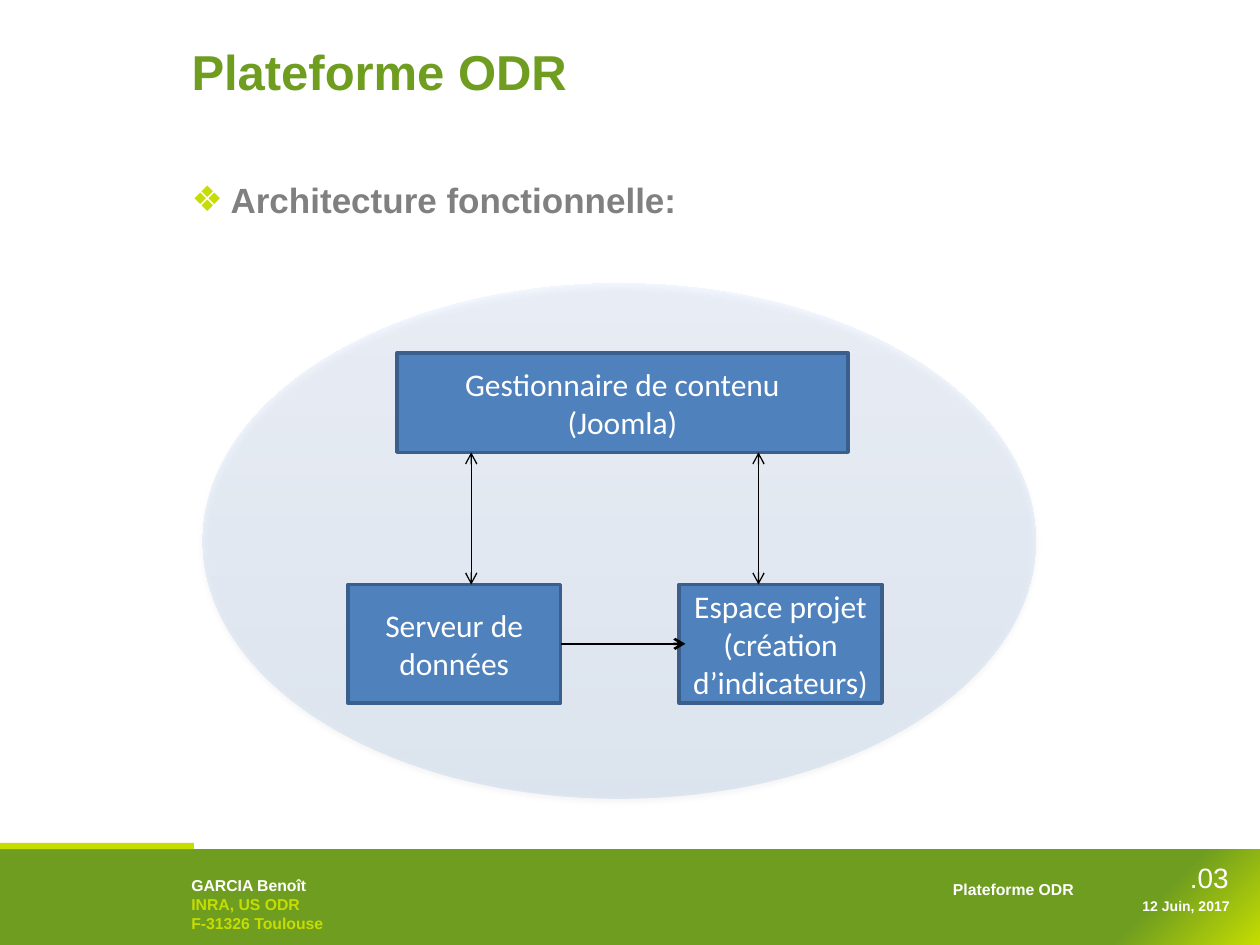
from lxml.etree import SubElement
from pptx import Presentation
from pptx.dml.color import RGBColor
from pptx.enum.shapes import MSO_CONNECTOR, MSO_SHAPE
from pptx.enum.text import MSO_ANCHOR, PP_ALIGN
from pptx.oxml import parse_xml
from pptx.oxml.ns import nsdecls, qn
from pptx.util import Inches, Pt

WHITE = RGBColor(0xFF, 0xFF, 0xFF)
BLACK = RGBColor(0, 0, 0)
GREEN = RGBColor(0x6F, 0x9D, 0x20)
LIME = RGBColor(0xC5, 0xDD, 0x01)
GRAY = RGBColor(0x80, 0x80, 0x80)
BLUE = RGBColor(0x4F, 0x81, 0xBD)
DARK_BLUE = RGBColor(0x3A, 0x5F, 0x8C)
HAZE_BLUE = RGBColor(0x3F, 0x80, 0xCE)
PALE_BLUE = RGBColor(0xA4, 0xC4, 0xFF)

CORNER = '<a:path path="circle"><a:fillToRect l="100000" t="100000"/></a:path>'
UPWARD = '<a:lin ang="16200000" scaled="0"/>'


def place(sp, left, top, width, height):
    sp.left, sp.top = Inches(left), Inches(top)
    sp.width, sp.height = Inches(width), Inches(height)


def add_run(p, text, size, color, bold=True, font="Arial"):
    r = p.add_run()
    r.text = text
    r.font.size, r.font.bold, r.font.name = Pt(size), bold, font
    r.font.color.rgb = color


def add_box(slide, kind, at, fill, line=None):
    sp = slide.shapes.add_shape(kind, *map(Inches, at))
    sp.shadow.inherit = False
    sp.fill.solid()
    sp.fill.fore_color.rgb = fill
    if line is None:
        sp.line.fill.background()
    else:
        sp.line.color.rgb = line
        sp.line.width = Pt(2)
    return sp


def set_gradient(sp, stops, direction, alpha=100):
    """Swap the solid fill for a gradient; stops are (percent, colour)."""
    gs = "".join(
        f'<a:gs pos="{pos * 1000}"><a:srgbClr val="{color}">'
        f'<a:alpha val="{alpha * 1000}"/></a:srgbClr></a:gs>'
        for pos, color in stops)
    grad = parse_xml(f'<a:gradFill {nsdecls("a")} rotWithShape="1">'
                     f'<a:gsLst>{gs}</a:gsLst>{direction}</a:gradFill>')
    spPr = sp._element.spPr
    spPr.replace(spPr.find(qn("a:solidFill")), grad)


def add_shadow(sp):
    effects = sp._element.spPr.find(qn("a:effectLst"))
    effects.append(parse_xml(
        f'<a:outerShdw {nsdecls("a")} blurRad="{Pt(3.1)}" dist="{Pt(1.8)}" '
        'dir="5400000" rotWithShape="0"><a:srgbClr val="000000">'
        '<a:alpha val="35000"/></a:srgbClr></a:outerShdw>'))


def add_node(slide, text, at):
    sp = add_box(slide, MSO_SHAPE.RECTANGLE, at, BLUE, DARK_BLUE)
    tf = sp.text_frame
    tf.word_wrap = True
    tf.vertical_anchor = MSO_ANCHOR.MIDDLE
    p = tf.paragraphs[0]
    p.alignment = PP_ALIGN.CENTER
    add_run(p, text, 18, WHITE, False, "Calibri")


def add_arrow(slide, start, end, width, ends):
    cxn = slide.shapes.add_connector(
        MSO_CONNECTOR.STRAIGHT, *map(Inches, start + end))
    cxn.line.color.rgb = BLACK
    cxn.line.width = Pt(width)
    ln = cxn.line._get_or_add_ln()
    for tag in ends:
        SubElement(ln, qn(f"a:{tag}"), type="arrow")
    SubElement(cxn._element.spPr, qn("a:effectLst"))


def add_text(slide, lines, at, align=PP_ALIGN.LEFT, anchor=MSO_ANCHOR.TOP):
    """Add a text box; each line is (text, size, colour, bold)."""
    tf = slide.shapes.add_textbox(*map(Inches, at)).text_frame
    tf.word_wrap = True
    tf.vertical_anchor = anchor
    for i, line in enumerate(lines):
        p = tf.add_paragraph() if i else tf.paragraphs[0]
        p.alignment = align
        add_run(p, *line)


def fill_title(sp, text):
    place(sp, 1.42, 0.28, 7.4, 0.57)
    sp.text_frame.vertical_anchor = MSO_ANCHOR.MIDDLE
    p = sp.text_frame.paragraphs[0]
    p.alignment = PP_ALIGN.LEFT
    add_run(p, text, 28, GREEN)


def fill_body(sp, text):
    place(sp, 1.42, 1.2, 8.15, 5.22)
    p = sp.text_frame.paragraphs[0]
    pPr = p._p.get_or_add_pPr()
    pPr.set("marL", str(Inches(0.31)))
    pPr.set("indent", str(-Inches(0.31)))
    color = SubElement(pPr, qn("a:buClr"))
    SubElement(color, qn("a:srgbClr"), val=str(LIME))
    SubElement(pPr, qn("a:buFont"), typeface="Arial")
    SubElement(pPr, qn("a:buChar"), char="❖")
    p.line_spacing = 1.5
    p.space_before = Pt(0)
    add_run(p, text, 20, GRAY)


def add_footer(slide):
    band = add_box(slide, MSO_SHAPE.RECTANGLE, (0, 6.74, 10, 0.76), GREEN)
    set_gradient(band, [(0, LIME), (11, GREEN), (100, GREEN)], CORNER)
    add_box(slide, MSO_SHAPE.RECTANGLE, (0, 6.69, 1.54, 0.05), LIME)
    right, middle = PP_ALIGN.RIGHT, MSO_ANCHOR.MIDDLE
    add_text(slide, [("12 Juin, 2017", 8, WHITE)],
             (7.78, 7.07, 2.08, 0.24), right, middle)
    add_text(slide, [(".03", 16, WHITE, False)],
             (8.62, 6.83, 1.23, 0.27), right, middle)
    add_text(slide, [("Plateforme ODR", 9, WHITE)],
             (3.82, 6.93, 4.8, 0.4), right)
    add_text(slide, [("GARCIA Benoît", 9, WHITE), ("INRA, US ODR", 9, LIME),
                     ("F-31326 Toulouse", 9, LIME)], (1.42, 6.9, 1.77, 0.56))


def add_diagram(slide):
    platform = add_box(slide, MSO_SHAPE.OVAL, (1.61, 2.25, 6.61, 4.09), HAZE_BLUE)
    set_gradient(platform, [(0, HAZE_BLUE), (100, PALE_BLUE)], UPWARD, alpha=13)
    add_shadow(platform)

    add_node(slide, "Gestionnaire de contenu (Joomla)", (3.15, 2.8, 3.58, 0.79))
    add_node(slide, "Serveur de données", (2.76, 4.64, 1.69, 0.94))
    add_node(slide, "Espace projet (création d’indicateurs)",
             (5.39, 4.64, 1.61, 0.94))

    add_arrow(slide, (4.45, 5.11), (5.44, 5.11), 1.5, ["tailEnd"])
    for x in (3.74, 6.02):
        add_arrow(slide, (x, 4.64), (x, 3.59), 0.75, ["headEnd", "tailEnd"])


def main():
    prs = Presentation()
    prs.slide_width, prs.slide_height = Inches(10), Inches(7.5)
    slide = prs.slides.add_slide(prs.slide_layouts[1])
    slide.background.fill.solid()
    slide.background.fill.fore_color.rgb = WHITE

    # Title and heading
    fill_title(slide.shapes.title, "Plateforme ODR")
    fill_body(slide.placeholders[1], "Architecture fonctionnelle:")

    # Footer band, then the architecture diagram
    add_footer(slide)
    add_diagram(slide)
    prs.save("out.pptx")


if __name__ == "__main__":
    main()
